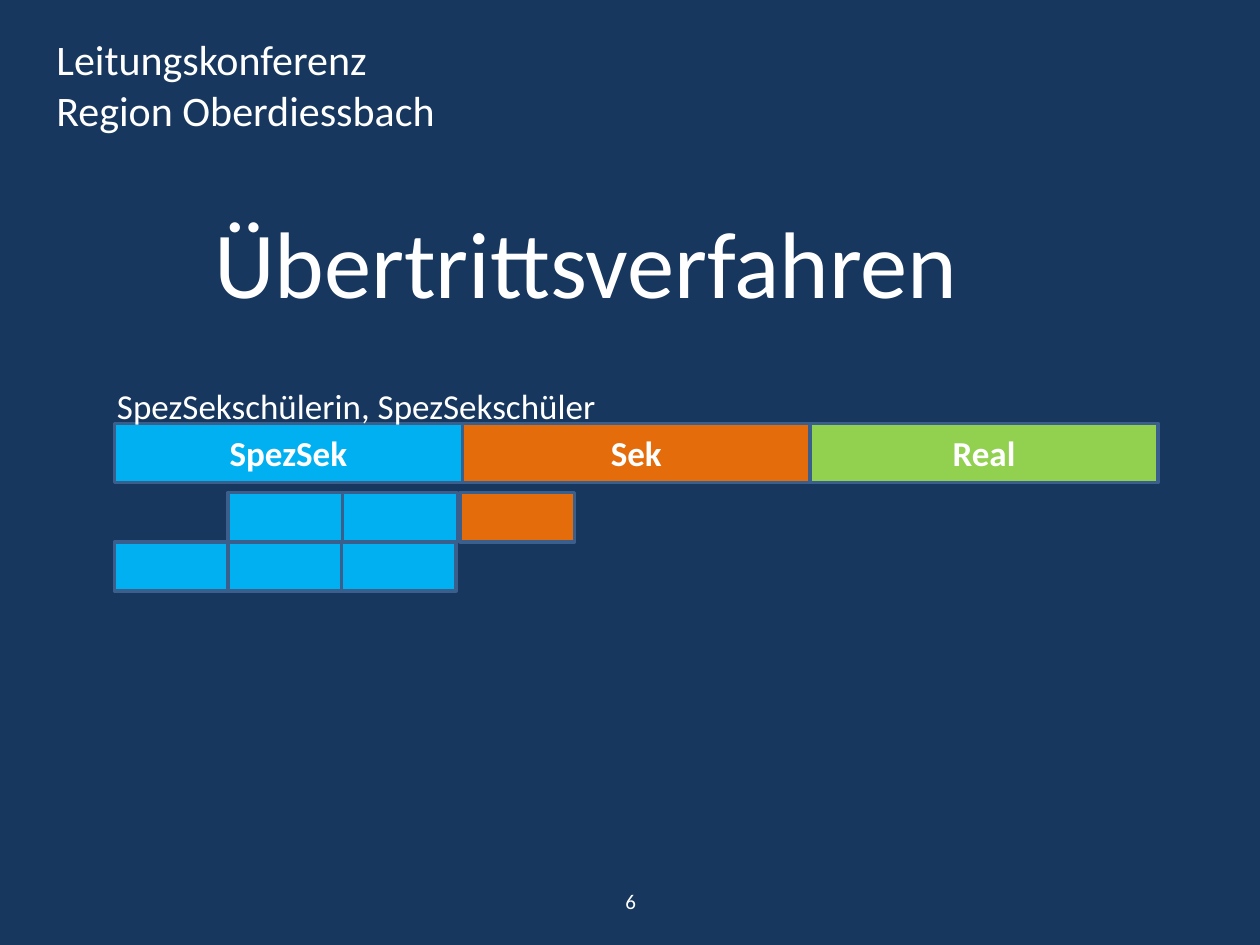
from pptx import Presentation
from pptx.dml.color import RGBColor
from pptx.enum.shapes import MSO_SHAPE
from pptx.enum.text import MSO_ANCHOR, MSO_AUTO_SIZE, PP_ALIGN
from pptx.util import Inches, Pt

NAVY = RGBColor(0x17, 0x37, 0x5E)
WHITE = RGBColor(0xFF, 0xFF, 0xFF)
BLUE = RGBColor(0x00, 0xB0, 0xF0)
ORANGE = RGBColor(0xE4, 0x6C, 0x0A)
GREEN = RGBColor(0x92, 0xD0, 0x50)
OUTLINE = RGBColor(0x3A, 0x5F, 0x8C)

RECTANGLE = MSO_SHAPE.RECTANGLE
LEFT, CENTER = PP_ALIGN.LEFT, PP_ALIGN.CENTER
TOP, MIDDLE = MSO_ANCHOR.TOP, MSO_ANCHOR.MIDDLE
NO_AUTOFIT = MSO_AUTO_SIZE.NONE
TITLE_ONLY = 5

BAR_LEFT, BAR_TOP, BAR_WIDTH, BAR_HEIGHT = 0.91, 3.36, 2.76, 0.47
YEAR_WIDTH, YEAR_HEIGHT = 0.91, 0.39
LEVELS = [("SpezSek", BLUE), ("Sek", ORANGE), ("Real", GREEN)]
# Top of each row, then the left edge and colour of its school years
PATHWAYS = [
    (3.91, [(1.81, BLUE), (2.72, BLUE), (3.65, ORANGE)]),
    (4.3, [(0.91, BLUE), (1.81, BLUE), (2.71, BLUE)]),
]


def write(shape, text, size, bold=False, align=LEFT, anchor=TOP, wrap=True):
    frame = shape.text_frame
    frame.text = text
    frame.word_wrap = wrap
    frame.auto_size = NO_AUTOFIT
    frame.vertical_anchor = anchor
    for para in frame.paragraphs:
        para.alignment = align
        font = para.font
        font.name, font.size, font.bold = "Calibri", Pt(size), bold
        font.color.rgb = WHITE


class SlideBuilder:
    def __init__(self, deck):
        self.page = deck.slides.add_slide(deck.slide_layouts[TITLE_ONLY])
        background = self.page.background.fill
        background.solid()
        background.fore_color.rgb = NAVY

    def title(self, text, left, top, width, height, **style):
        box = self.page.shapes.title
        box.left, box.top = Inches(left), Inches(top)
        box.width, box.height = Inches(width), Inches(height)
        write(box, text, **style)

    def text(self, text, left, top, width, height, **style):
        box = self.page.shapes.add_textbox(
            Inches(left), Inches(top), Inches(width), Inches(height))
        write(box, text, **style)

    def block(self, left, top, width, height, color, label=None):
        shape = self.page.shapes.add_shape(
            RECTANGLE, Inches(left), Inches(top), Inches(width), Inches(height))
        shape.shadow.inherit = False
        shape.fill.solid()
        shape.fill.fore_color.rgb = color
        shape.line.color.rgb = OUTLINE
        shape.line.width = Pt(2)
        if label:
            write(shape, label, size=20, bold=True, align=CENTER, anchor=MIDDLE)


def main():
    deck = Presentation()
    deck.slide_width, deck.slide_height = Inches(10), Inches(7.5)
    slide = SlideBuilder(deck)

    slide.text("Leitungskonferenz\nRegion Oberdiessbach",
               0.35, 0.22, 3.36, 0.91, size=24, wrap=False)
    slide.title("Übertrittsverfahren", 1.6, 1.57, 6.19, 1.01, size=54, wrap=False)
    slide.text("6", 3.42, 6.95, 3.17, 0.4, size=12, align=CENTER, anchor=MIDDLE)

    for index, (level, color) in enumerate(LEVELS):
        slide.block(BAR_LEFT + index * BAR_WIDTH, BAR_TOP,
                    BAR_WIDTH, BAR_HEIGHT, color, level)
    for top, years in PATHWAYS:
        for left, color in years:
            slide.block(left, top, YEAR_WIDTH, YEAR_HEIGHT, color)

    slide.text("SpezSekschülerin, SpezSekschüler", 0.83, 3, 4.49, 0.44, size=20)
    deck.save("out.pptx")


if __name__ == "__main__":
    main()
